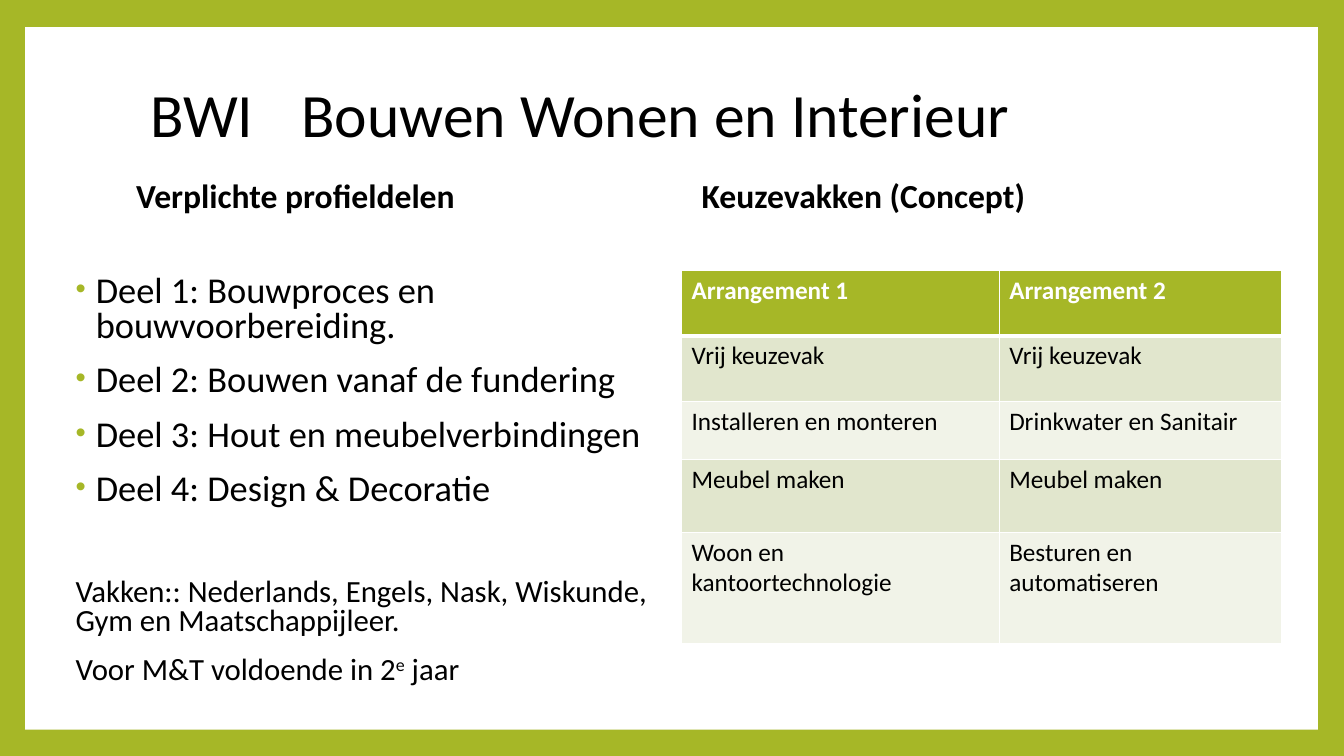
from dataclasses import dataclass

from lxml import etree
from pptx import Presentation, util as u
from pptx.dml.color import RGBColor
from pptx.enum import shapes, text
from pptx.oxml import ns

EMU_PER_PX = 9144  # 100 px to the inch
COMPARISON_LAYOUT = 4


@dataclass(frozen=True)
class Theme:
    font: str = "Calibri"
    green: str = "A6B727"
    white: str = "FFFFFF"
    black: str = "000000"
    bands: tuple = ("E1E6CD", "F1F3E8")
    title: int = 44
    heading: int = 24
    topic: int = 26
    remark: int = 22
    cell: int = 18


def px(length):
    return u.Emu(length * EMU_PER_PX)


def rgb(colour):
    return RGBColor.from_string(colour)


def apply(target, values):
    for name, value in values.items():
        setattr(target, name, value)


def add_xml(parent, tag, **attributes):
    child = etree.SubElement(parent, ns.qn(tag))
    for name, value in attributes.items():
        child.set(name, str(value))
    return child


class SlideBuilder:
    def __init__(self, slide, theme):
        self.slide = slide
        self.theme = theme

    def frame(self, colour, box):
        """Colour the background and lay a white panel behind everything else."""
        background = self.slide.background.fill
        background.solid()
        background.fore_color.rgb = rgb(colour)
        panel = self.slide.shapes.add_shape(shapes.MSO_SHAPE.RECTANGLE, *map(px, box))
        panel.shadow.inherit = False
        panel.fill.solid()
        panel.fill.fore_color.rgb = rgb(self.theme.white)
        panel.line.fill.background()
        panel._element.getparent().insert(2, panel._element)

    def placeholder(self, idx, box, anchor):
        holder = self.slide.placeholders[idx]
        apply(holder, dict(zip(("left", "top", "width", "height"), map(px, box))))
        apply(holder.text_frame, {
            "word_wrap": True,
            "auto_size": text.MSO_AUTO_SIZE.NONE,
            "vertical_anchor": anchor,
            "margin_left": px(10), "margin_right": px(10),
            "margin_top": px(5), "margin_bottom": px(5),
        })
        return holder.text_frame

    def run(self, paragraph, wording, size, colour=None, bold=False):
        run = paragraph.add_run()
        run.text = wording
        apply(run.font, {"name": self.theme.font, "size": u.Pt(size), "bold": bold})
        run.font.color.rgb = rgb(colour or self.theme.black)
        return run

    def format_paragraph(self, paragraph, spacing, before=0, margin=0, hanging=0, bullet=None):
        apply(paragraph, {
            "alignment": text.PP_ALIGN.LEFT,
            "line_spacing": spacing,
            "space_before": u.Pt(before),
            "space_after": u.Pt(0),
        })
        properties = paragraph._p.get_or_add_pPr()
        properties.set("marL", str(px(margin)))
        properties.set("indent", str(px(-hanging)))
        if bullet:
            colour = add_xml(properties, "a:buClr")
            add_xml(colour, "a:srgbClr", val=self.theme.green)
            add_xml(properties, "a:buSzPct", val=80000)
            add_xml(properties, "a:buFont", typeface="Arial")
            add_xml(properties, "a:buChar", char=bullet)
        else:
            add_xml(properties, "a:buNone")
        return properties

    def title(self, code, name, box, inset, tab):
        frame = self.placeholder(0, box, text.MSO_ANCHOR.MIDDLE)
        frame.margin_left = px(inset)
        paragraph = frame.paragraphs[0]
        properties = self.format_paragraph(paragraph, 0.9)
        add_xml(add_xml(properties, "a:tabLst"), "a:tab", pos=px(tab), algn="l")
        self.run(paragraph, f"{code}\t{name}", self.theme.title)

    def heading(self, idx, wording, box):
        paragraph = self.placeholder(idx, box, text.MSO_ANCHOR.MIDDLE).paragraphs[0]
        self.format_paragraph(paragraph, 0.9)
        self.run(paragraph, wording, self.theme.heading, bold=True)

    def body(self, idx, topics, remarks, box):
        """Fill a list with bulleted topics, then remarks set apart by a gap.

        A remark is a list of runs; every second run is superscript.
        """
        frame = self.placeholder(idx, box, text.MSO_ANCHOR.TOP)
        paragraph = frame.paragraphs[0]
        for number, topic in enumerate(topics):
            if number:
                paragraph = frame.add_paragraph()
            self.format_paragraph(paragraph, 0.8, 14, margin=25, hanging=20, bullet="•")
            self.run(paragraph, topic, self.theme.topic)
        for number, remark in enumerate(remarks):
            paragraph = frame.add_paragraph()
            self.format_paragraph(paragraph, 0.8, 14 if number else 50, margin=5)
            for position, wording in enumerate(remark):
                run = self.run(paragraph, wording, self.theme.remark)
                if position % 2:
                    run._r.get_or_add_rPr().set("baseline", "30000")

    def borders(self, cell, widths):
        properties = cell._tc.get_or_add_tcPr()
        for position, (side, width) in enumerate(widths.items()):
            line = add_xml(properties, f"a:ln{side}", w=u.Pt(width))
            add_xml(add_xml(line, "a:solidFill"), "a:srgbClr", val=self.theme.white)
            properties.insert(position, line)

    def table(self, rows, origin, column_widths, row_heights):
        size = sum(column_widths), sum(row_heights)
        table = self.slide.shapes.add_table(
            len(rows), len(column_widths), *map(px, origin + size)).table
        for column, width in zip(table.columns, column_widths):
            column.width = px(width)
        for number, (row, height) in enumerate(zip(rows, row_heights)):
            table.rows[number].height = px(height)
            header = number == 0
            fill = self.theme.green if header else self.theme.bands[(number - 1) % 2]
            colour = self.theme.white if header else self.theme.black
            widths = {"L": 1, "R": 1, "T": 3 if number == 1 else 1, "B": 3 if header else 1}
            for column, wording in enumerate(row):
                cell = table.cell(number, column)
                cell.fill.solid()
                cell.fill.fore_color.rgb = rgb(fill)
                self.borders(cell, widths)
                self.run(cell.text_frame.paragraphs[0], wording, self.theme.cell, colour, header)

    def drop_placeholder(self, idx):
        element = self.slide.placeholders[idx]._element
        element.getparent().remove(element)


TOPICS = [
    "Deel 1: Bouwproces en bouwvoorbereiding.",
    "Deel 2: Bouwen vanaf de fundering",
    "Deel 3: Hout en meubelverbindingen",
    "Deel 4: Design & Decoratie",
]
REMARKS = [
    ["Vakken:: Nederlands, Engels, Nask, Wiskunde, Gym en Maatschappijleer."],
    ["Voor M&T voldoende in 2", "e", " jaar"],
]
ARRANGEMENTS = [
    ("Arrangement 1", "Arrangement 2"),
    ("Vrij keuzevak", "Vrij keuzevak"),
    ("Installeren en monteren", "Drinkwater en Sanitair"),
    ("Meubel maken", "Meubel maken"),
    ("Woon en kantoortechnologie", "Besturen en automatiseren"),
]


def main():
    deck = Presentation()
    apply(deck, {"slide_width": px(1333), "slide_height": px(750)})
    theme = Theme()
    slide = deck.slides.add_slide(deck.slide_layouts[COMPARISON_LAYOUT])
    builder = SlideBuilder(slide, theme)
    builder.frame(theme.green, (25, 27, 1282, 697))
    builder.title("BWI", "Bouwen Wonen en Interieur", (125, 67, 1080, 100), inset=24, tab=185)
    builder.heading(1, "Verplichte profieldelen", (125, 88, 520, 216))
    builder.body(2, TOPICS, REMARKS, (60, 268, 605, 452))
    builder.heading(3, "Keuzevakken (Concept)", (686, 88, 520, 216))
    builder.drop_placeholder(4)
    builder.table(ARRANGEMENTS, (676, 268), (315, 280), (65, 65, 58, 72, 111))
    deck.save("out.pptx")


if __name__ == "__main__":
    main()
